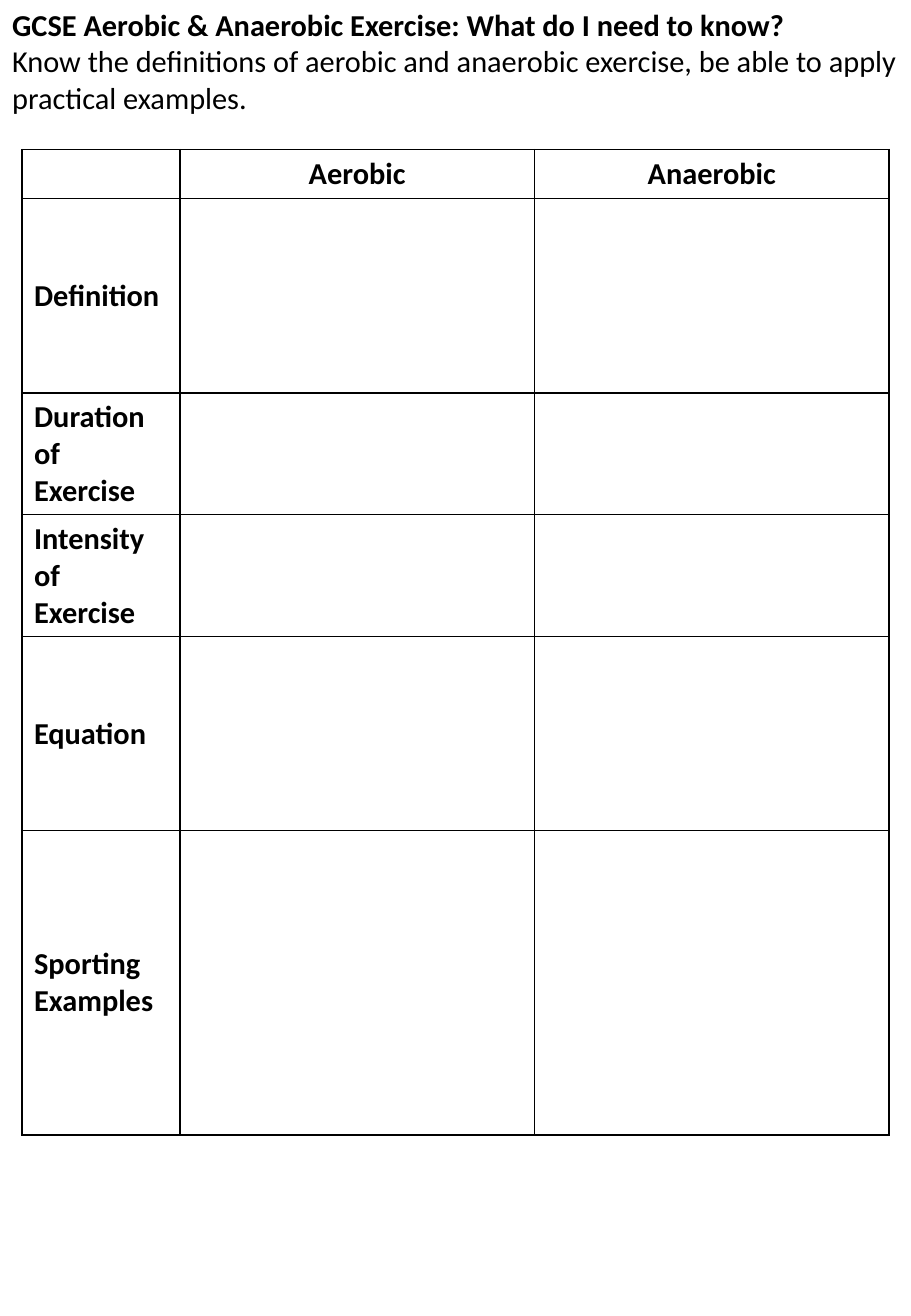
from lxml import etree
from pptx import Presentation
from pptx.dml.color import RGBColor
from pptx.enum.text import MSO_ANCHOR, MSO_AUTO_SIZE, PP_ALIGN
from pptx.oxml.ns import qn
from pptx.util import Pt

LEFT, CENTER = PP_ALIGN.LEFT, PP_ALIGN.CENTER
TOP, MIDDLE = MSO_ANCHOR.TOP, MSO_ANCHOR.MIDDLE
FIT_SHAPE = MSO_AUTO_SIZE.SHAPE_TO_FIT_TEXT

TITLE_ONLY_LAYOUT = 5
COLOURS = {"ink": "000000"}
FONT = "Calibri"
TEXT_SIZE = Pt(18)
BORDER_WIDTH = Pt(1)

HEADING = "GCSE Aerobic & Anaerobic Exercise: What do I need to know?"
AIM = ("Know the definitions of aerobic and anaerobic exercise, "
       "be able to apply practical examples.")
HEADERS = ["", "Aerobic", "Anaerobic"]
HEADER_HEIGHT = 29
TOPICS = {
    "Definition": 115.2,
    "Duration of Exercise": 72.2,
    "Intensity of Exercise": 72.2,
    "Equation": 115.2,
    "Sporting Examples": 180.2,
}
COLUMN_WIDTHS = [93.6, 210.24, 210.24]


def format_paragraph(para, bold, align=LEFT):
    para.alignment = align
    for font in [para.font] + [span.font for span in para.runs]:
        font.name = FONT
        font.size = TEXT_SIZE
        font.bold = bold
        font.color.rgb = RGBColor.from_string(COLOURS["ink"])


def add_borders(cell):
    properties = cell._tc.get_or_add_tcPr()
    for side in ("lnL", "lnR", "lnT", "lnB"):
        line = etree.SubElement(properties, qn(f"a:{side}"), w=str(BORDER_WIDTH))
        fill = etree.SubElement(line, qn("a:solidFill"))
        etree.SubElement(fill, qn("a:srgbClr"), val=COLOURS["ink"])


def fill_cell(cell, text, align, anchor):
    add_borders(cell)
    cell.fill.background()
    cell.vertical_anchor = anchor
    cell.text_frame.text = text
    format_paragraph(cell.text_frame.paragraphs[0], True, align)


def add_heading(page):
    title = page.shapes.title
    title.left, title.top, title.width, title.height = Pt(0), Pt(0), Pt(540), Pt(72.7)
    frame = title.text_frame
    frame.text = f"{HEADING}\n{AIM}"
    frame.word_wrap = True
    frame.auto_size = FIT_SHAPE
    frame.vertical_anchor = TOP
    for para, bold in zip(frame.paragraphs, (True, False)):
        format_paragraph(para, bold)


def add_worksheet_table(page):
    rows = [HEADERS] + [[topic, "", ""] for topic in TOPICS]
    heights = [HEADER_HEIGHT, *TOPICS.values()]
    table = page.shapes.add_table(
        len(rows), len(HEADERS), Pt(13), Pt(88.6),
        Pt(sum(COLUMN_WIDTHS)), Pt(sum(heights))).table
    table.first_row = False
    table.horz_banding = False
    for column, width in zip(table.columns, COLUMN_WIDTHS):
        column.width = Pt(width)
    for row_index, (row, texts, height) in enumerate(zip(table.rows, rows, heights)):
        row.height = Pt(height)
        align, anchor = (LEFT, MIDDLE) if row_index else (CENTER, TOP)
        for cell, text in zip(row.cells, texts):
            fill_cell(cell, text, align, anchor)


def main():
    deck = Presentation()
    deck.slide_width, deck.slide_height = Pt(540), Pt(780)
    page = deck.slides.add_slide(deck.slide_layouts[TITLE_ONLY_LAYOUT])
    add_heading(page)
    add_worksheet_table(page)
    deck.save("out.pptx")


if __name__ == "__main__":
    main()
